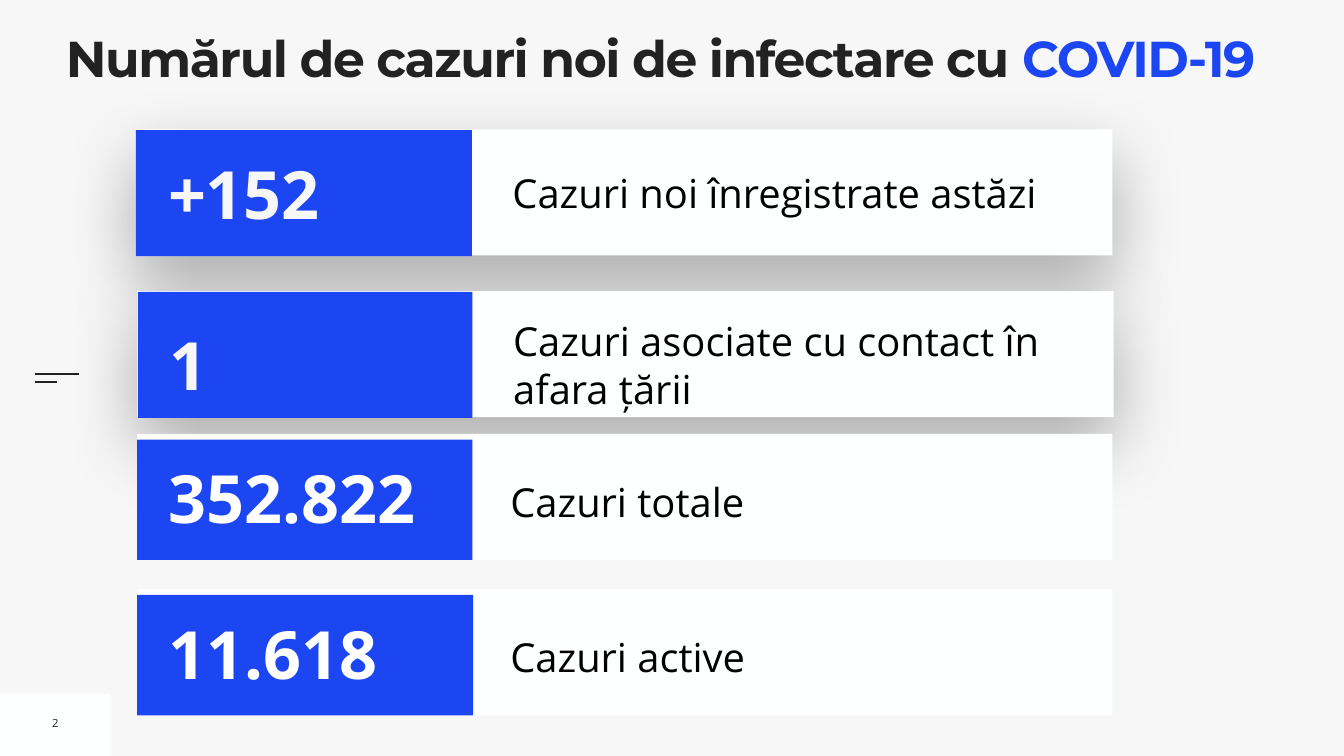
from dataclasses import dataclass

from lxml import etree
from pptx import Presentation
from pptx.dml.color import RGBColor
from pptx.enum.shapes import MSO_CONNECTOR as Connector, MSO_SHAPE as Shape
from pptx.enum.text import MSO_ANCHOR as Anchor, MSO_AUTO_SIZE as AutoSize, PP_ALIGN as Align
from pptx.oxml.ns import qn
from pptx.util import Pt

PX = 12700  # EMU per px, 72 px to the inch


@dataclass(frozen=True)
class Theme:
    background: str = "F7F7F7"
    panel: str = "FEFFFF"
    accent: str = "1D46F3"
    ink: str = "222222"
    label: str = "000000"
    white: str = "FFFFFF"
    heading_font: str = "Montserrat"
    body_font: str = "Open Sans"
    title_size: int = 72
    value_size: int = 95
    label_size: int = 57
    number_size: int = 16


theme = Theme()


def add_rectangle(shapes, box, color):
    shape = shapes.add_shape(Shape.RECTANGLE, *(n * PX for n in box))
    shape.shadow.inherit = False
    shape.fill.solid()
    shape.fill.fore_color.rgb = RGBColor.from_string(color)
    shape.line.fill.background()
    return shape


def add_text(shapes, box, runs, size, font=theme.body_font, bold=False, inset=7):
    """Add a one-paragraph text box; runs are (text, color) pairs."""
    shape = shapes.add_textbox(*(n * PX for n in box))
    frame = shape.text_frame
    frame.word_wrap = True
    frame.auto_size = AutoSize.SHAPE_TO_FIT_TEXT
    frame.vertical_anchor = Anchor.MIDDLE
    frame.margin_left = frame.margin_right = inset * PX
    frame.margin_top = frame.margin_bottom = inset * PX
    paragraph = frame.paragraphs[0]
    for text, color in runs:
        run = paragraph.add_run()
        run.text = text
        run.font.name = font
        run.font.size = Pt(size)
        run.font.bold = bold
        run.font.color.rgb = RGBColor.from_string(color)
    return frame


presentation = Presentation()
presentation.slide_width = 1920 * PX
presentation.slide_height = 1080 * PX
slide = presentation.slides.add_slide(presentation.slide_layouts[6])
slide.background.fill.solid()
slide.background.fill.fore_color.rgb = RGBColor.from_string(theme.background)

# Page number corner and margin mark
add_rectangle(slide.shapes, (0, 991, 158, 89), theme.panel)
for right, y in ((113, 534), (81, 546)):
    line = slide.shapes.add_connector(Connector.STRAIGHT, 50 * PX, y * PX, right * PX, y * PX)
    line.line.color.rgb = RGBColor.from_string(theme.ink)
    line.line.width = Pt(3)
    etree.SubElement(line.element.spPr, qn("a:effectLst"))
number = add_text(slide.shapes, (67, 1014, 24, 37), [("2", theme.ink)], theme.number_size)
number.word_wrap = False
number.paragraphs[0].alignment = Align.CENTER

# Title
title = add_text(
    slide.shapes, (94, 56, 1724, 114),
    [("Numărul de cazuri noi de infectare cu ", theme.ink), ("COVID-19", theme.accent)],
    theme.title_size, theme.heading_font, bold=True, inset=0)
title.auto_size = AutoSize.NONE
title.vertical_anchor = Anchor.TOP
title.paragraphs[0].line_spacing = 0.8
for run in title.paragraphs[0].runs:
    run.font._element.set("spc", "-200")

# Statistic cards: value, label, value color, raised, then the four boxes
cards = [
    ("11.618", "Cazuri active", theme.white, False,
     (196, 842, 1393, 180), (729, 883, 834, 90), (196, 850, 480, 172), (234, 868, 434, 130)),
    ("+152", "Cazuri noi înregistrate astăzi", theme.background, True,
     (194, 185, 1395, 180), (725, 233, 847, 84), (194, 186, 480, 180), (233, 210, 434, 130)),
    ("1", "Cazuri asociate cu contact în afara țării", theme.background, True,
     (196, 416, 1395, 180), (726, 444, 847, 153), (197, 417, 478, 180), (235, 455, 434, 130)),
    ("352.822", "Cazuri totale", theme.white, False,
     (196, 620, 1393, 180), (729, 666, 834, 81), (196, 628, 479, 172), (234, 645, 434, 130)),
]
for value, label, value_color, raised, panel_box, label_box, badge_box, value_box in cards:
    shapes = slide.shapes.add_group_shape().shapes
    panel = add_rectangle(shapes, panel_box, theme.panel)
    label_frame = add_text(shapes, label_box, [(label, theme.label)], theme.label_size,
                           inset=7 if raised else 0)
    if raised:
        # Soft shadow falling straight down
        effects = panel.element.spPr.find(qn("a:effectLst"))
        shadow = etree.SubElement(effects, qn("a:outerShdw"), blurRad=str(100 * PX),
                                  dist=str(40 * PX), dir="5400000", rotWithShape="0")
        color = etree.SubElement(shadow, qn("a:srgbClr"), val=theme.label)
        etree.SubElement(color, qn("a:alpha"), val="30000")
    else:
        label_frame.paragraphs[0].line_spacing = 1.3
        label_frame.paragraphs[0].space_before = Pt(20)
    add_rectangle(shapes, badge_box, theme.accent)
    add_text(shapes, value_box, [(value, value_color)], theme.value_size, bold=True)

presentation.save("out.pptx")
